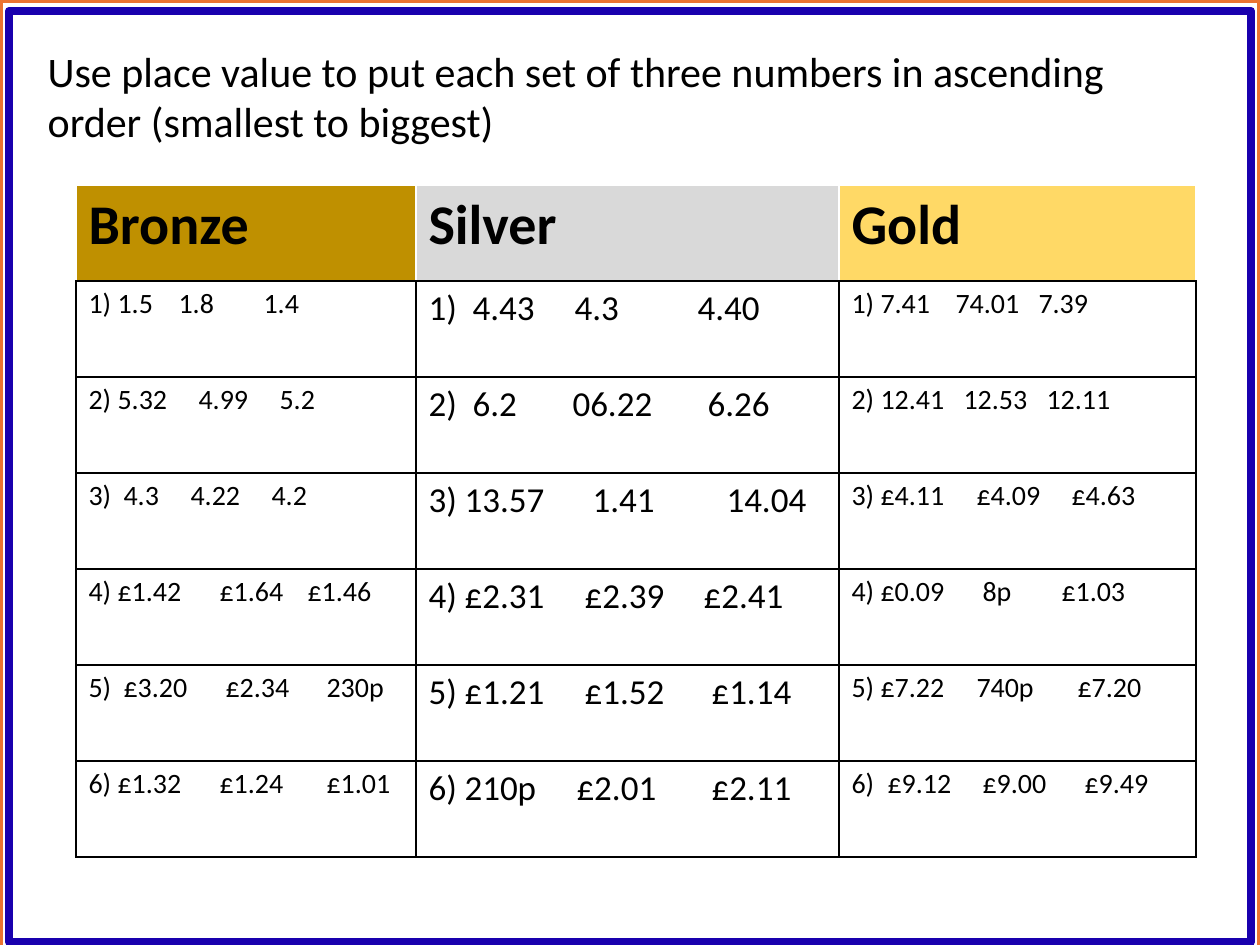
"""Build a place value worksheet slide with bronze, silver and gold exercises."""
from dataclasses import dataclass

from lxml import etree
from pptx import Presentation
from pptx.dml.color import RGBColor
from pptx.enum.shapes import MSO_SHAPE
from pptx.enum.text import MSO_ANCHOR, MSO_AUTO_SIZE, PP_ALIGN
from pptx.oxml.ns import qn
from pptx.util import Emu, Pt

RECTANGLE = MSO_SHAPE.RECTANGLE
TOP = MSO_ANCHOR.TOP
FIXED = MSO_AUTO_SIZE.NONE
LEFT = PP_ALIGN.LEFT
FONT = "Calibri"
BLACK, WHITE = "000000", "FFFFFF"
TITLE_ONLY = 5
ROW_HEIGHT = 96
TABLE_LEFT, TABLE_TOP = 76, 185


@dataclass(frozen=True)
class Frame:
    """A page border: box in px, line colour and width in points."""
    box: tuple[int, int, int, int]
    color: str
    weight: float


@dataclass(frozen=True)
class Exercise:
    """Three values to sort and the px offset at which each one starts."""
    values: tuple[str, str, str]
    stops: tuple[int, int, int]


@dataclass(frozen=True)
class Level:
    """A difficulty column with its heading, look and exercises."""
    name: str
    fill: str
    width: int
    size: int
    exercises: tuple[Exercise, ...]


FRAMES = (
    Frame((0, 0, 1260, 954), "EB7331", 3),
    Frame((9, 11, 1242, 931), "1900AE", 4.5),
)

LEVELS = (
    Level("Bronze", "BF9000", 340, 16, (
        Exercise(("1.5", "1.8", "1.4"), (29, 90, 175)),
        Exercise(("5.32", "4.99", "5.2"), (29, 110, 191)),
        Exercise(("4.3", "4.22", "4.2"), (35, 102, 183)),
        Exercise(("£1.42", "£1.64", "£1.46"), (29, 131, 219)),
        Exercise(("£3.20", "£2.34", "230p"), (35, 137, 238)),
        Exercise(("£1.32", "£1.24", "£1.01"), (29, 131, 238)),
    )),
    Level("Silver", "D9D9D9", 423, 20, (
        Exercise(("4.43", "4.3", "4.40"), (44, 146, 269)),
        Exercise(("6.2", "06.22", "6.26"), (44, 144, 279)),
        Exercise(("13.57", "1.41", "14.04"), (36, 164, 298)),
        Exercise(("£2.31", "£2.39", "£2.41"), (36, 156, 275)),
        Exercise(("£1.21", "£1.52", "£1.14"), (36, 156, 283)),
        Exercise(("210p", "£2.01", "£2.11"), (36, 148, 283)),
    )),
    Level("Gold", "FFD966", 357, 16, (
        Exercise(("7.41", "74.01", "7.39"), (29, 104, 187)),
        Exercise(("12.41", "12.53", "12.11"), (29, 112, 195)),
        Exercise(("£4.11", "£4.09", "£4.63"), (29, 125, 220)),
        Exercise(("£0.09", "8p", "£1.03"), (29, 131, 210)),
        Exercise(("£7.22", "740p", "£7.20"), (29, 125, 226)),
        Exercise(("£9.12", "£9.00", "£9.49"), (36, 131, 233)),
    )),
)


def px(length: int) -> Emu:
    """Turn px into EMU at 126 px to the inch."""
    return Emu(round(length * 914400 / 126))


def rgb(color: str) -> RGBColor:
    """Turn a hex string into a colour."""
    return RGBColor.from_string(color)


def write(text_frame, text: str, *, size: int, bold: bool = False,
          stops: tuple[int, ...] = ()) -> None:
    """Write one left-aligned paragraph with optional tab stops."""
    paragraph = text_frame.paragraphs[0]
    paragraph.alignment = LEFT
    if stops:
        tabs = etree.SubElement(paragraph._p.get_or_add_pPr(), qn("a:tabLst"))
        for stop in stops:
            etree.SubElement(tabs, qn("a:tab"), pos=str(px(stop)), algn="l")
    run = paragraph.add_run()
    run.text = text
    run.font.name = FONT
    run.font.size = Pt(size)
    run.font.bold = bold
    run.font.color.rgb = rgb(BLACK)


def set_borders(cell, sides: dict[str, str]) -> None:
    """Give each named side of a cell a one point line."""
    properties = cell._tc.get_or_add_tcPr()
    for side, color in sides.items():
        line = etree.SubElement(properties, qn(f"a:ln{side}"), w=str(Pt(1)))
        fill = etree.SubElement(line, qn("a:solidFill"))
        etree.SubElement(fill, qn("a:srgbClr"), val=color)


def draw_frame(slide, frame: Frame) -> None:
    """Draw an unfilled page border."""
    border = slide.shapes.add_shape(RECTANGLE, *map(px, frame.box))
    border.shadow.inherit = False
    border.fill.background()
    border.line.color.rgb = rgb(frame.color)
    border.line.width = Pt(frame.weight)


def draw_title(slide, text: str) -> None:
    """Place and fill the title placeholder."""
    title = slide.shapes.title
    title.left, title.top, title.width, title.height = map(px, (35, 39, 1099, 115))
    title.text_frame.word_wrap = True
    title.text_frame.auto_size = FIXED
    title.text_frame.vertical_anchor = TOP
    write(title.text_frame, text, size=24)


def draw_table(slide, levels: tuple[Level, ...]) -> None:
    """Draw one column per level, with a heading above its exercises."""
    row_count = 1 + len(levels[0].exercises)
    width = sum(level.width for level in levels)
    table = slide.shapes.add_table(
        row_count, len(levels), px(TABLE_LEFT), px(TABLE_TOP),
        px(width), px(row_count * ROW_HEIGHT)).table
    table.first_row = table.horz_banding = False
    for row in table.rows:
        row.height = px(ROW_HEIGHT)
    for column, level in enumerate(levels):
        table.columns[column].width = px(level.width)
        heading = table.cell(0, column)
        set_borders(heading, {"L": WHITE, "R": WHITE, "T": WHITE, "B": BLACK})
        heading.fill.solid()
        heading.fill.fore_color.rgb = rgb(level.fill)
        write(heading.text_frame, level.name, size=32, bold=True)
        for number, exercise in enumerate(level.exercises, 1):
            cell = table.cell(number, column)
            set_borders(cell, dict.fromkeys("LRTB", BLACK))
            cell.fill.background()
            write(cell.text_frame, "\t".join((f"{number})", *exercise.values)),
                  size=level.size, stops=exercise.stops)


def main() -> None:
    """Build and save the slide."""
    presentation = Presentation()
    presentation.slide_width, presentation.slide_height = px(1260), px(945)
    slide = presentation.slides.add_slide(presentation.slide_layouts[TITLE_ONLY])
    for frame in FRAMES:
        draw_frame(slide, frame)
    draw_table(slide, LEVELS)
    draw_title(slide, "Use place value to put each set of three numbers "
                      "in ascending order (smallest to biggest)")
    presentation.save("out.pptx")


if __name__ == "__main__":
    main()
